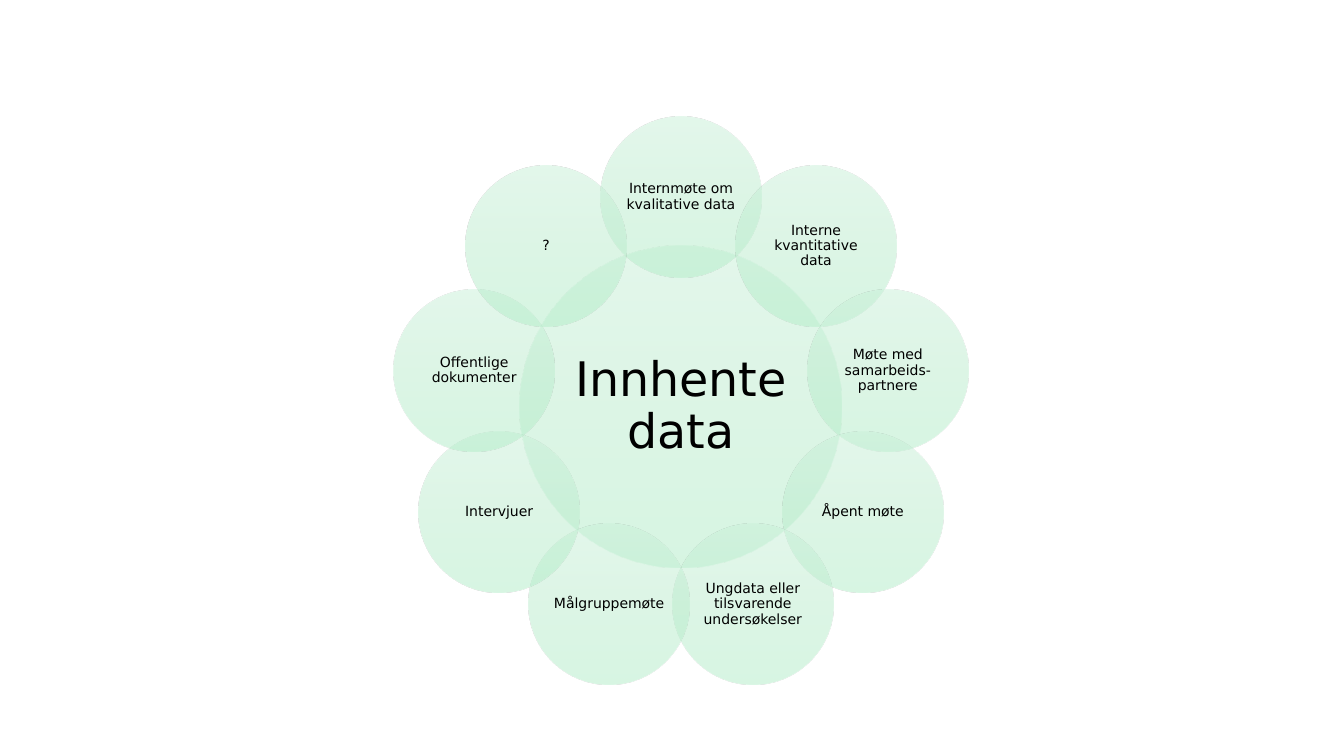
from math import cos, pi, sin

from lxml.etree import SubElement
from pptx import Presentation
from pptx.dml.color import RGBColor
from pptx.enum.shapes import MSO_SHAPE
from pptx.enum.text import MSO_ANCHOR, PP_ALIGN
from pptx.oxml.ns import qn
from pptx.util import Pt

PX = 914400 / 100.8
BLACK = RGBColor(0x00, 0x00, 0x00)
MINT_TOP = RGBColor(0xC9, 0xF1, 0xD9)
MINT_MIDDLE = RGBColor(0xBC, 0xED, 0xCE)
MINT_BOTTOM = RGBColor(0xB1, 0xED, 0xC8)

CENTRE_X, CENTRE_Y = 681, 407
HUB_DIAMETER = 322
PETAL_DIAMETER = 161
ORBIT_RADIUS = 210
PETALS = [
    "Internmøte om kvalitative data",
    "Interne kvantitative data",
    "Møte med samarbeids-partnere",
    "Åpent møte",
    "Ungdata eller tilsvarende undersøkelser",
    "Målgruppemøte",
    "Intervjuer",
    "Offentlige dokumenter",
    "?",
]


def emu(pixels):
    return round(pixels * PX)


class FlowerSlide:
    font_name = "DejaVu Sans"
    gradient = {0: MINT_TOP, 50: MINT_MIDDLE, 100: MINT_BOTTOM}
    opacity = 50

    def __init__(self, presentation):
        self.slide = presentation.slides.add_slide(presentation.slide_layouts[6])

    def fill_gradient(self, shape):
        """Fill from top to bottom with the translucent mint stops."""
        shape.fill.gradient()
        shape.fill.gradient_angle = 270
        stops = shape.element.find(".//" + qn("a:gsLst"))
        stops.clear()
        for position, colour in self.gradient.items():
            stop = SubElement(stops, qn("a:gs"), pos=str(position * 1000))
            tint = SubElement(stop, qn("a:srgbClr"), val=str(colour))
            SubElement(tint, qn("a:alpha"), val=str(self.opacity * 1000))

    def add_text(self, shape, text, size, inset):
        frame = shape.text_frame
        frame_format = {"word_wrap": True, "vertical_anchor": MSO_ANCHOR.MIDDLE}
        for side in ("left", "top", "right", "bottom"):
            frame_format[f"margin_{side}"] = emu(inset)
        paragraph = frame.paragraphs[0]
        paragraph_format = {"text": text, "alignment": PP_ALIGN.CENTER, "line_spacing": 0.9}
        font_format = {"name": self.font_name, "size": Pt(size)}
        for target, values in (
            (frame, frame_format),
            (paragraph, paragraph_format),
            (paragraph.font, font_format),
        ):
            for name, value in values.items():
                setattr(target, name, value)
        paragraph.font.color.rgb = BLACK

    def add_circle(self, centre_x, centre_y, diameter, text, size, inset):
        left, top = centre_x - diameter / 2, centre_y - diameter / 2
        shape = self.slide.shapes.add_shape(
            MSO_SHAPE.OVAL, emu(left), emu(top), emu(diameter), emu(diameter)
        )
        shape.shadow.inherit = False
        shape.line.fill.background()
        self.fill_gradient(shape)
        self.add_text(shape, text, size, inset)


def main():
    presentation = Presentation()
    presentation.slide_width = emu(1344)
    presentation.slide_height = emu(756)
    flower = FlowerSlide(presentation)
    flower.add_circle(CENTRE_X, CENTRE_Y, HUB_DIAMETER, "Innhente data", 34, 5)
    for index, text in enumerate(PETALS):
        angle = 2 * pi * index / len(PETALS)
        flower.add_circle(
            CENTRE_X + ORBIT_RADIUS * sin(angle),
            CENTRE_Y - ORBIT_RADIUS * cos(angle),
            PETAL_DIAMETER, text, 10, 1,
        )
    presentation.save("out.pptx")


if __name__ == "__main__":
    main()
